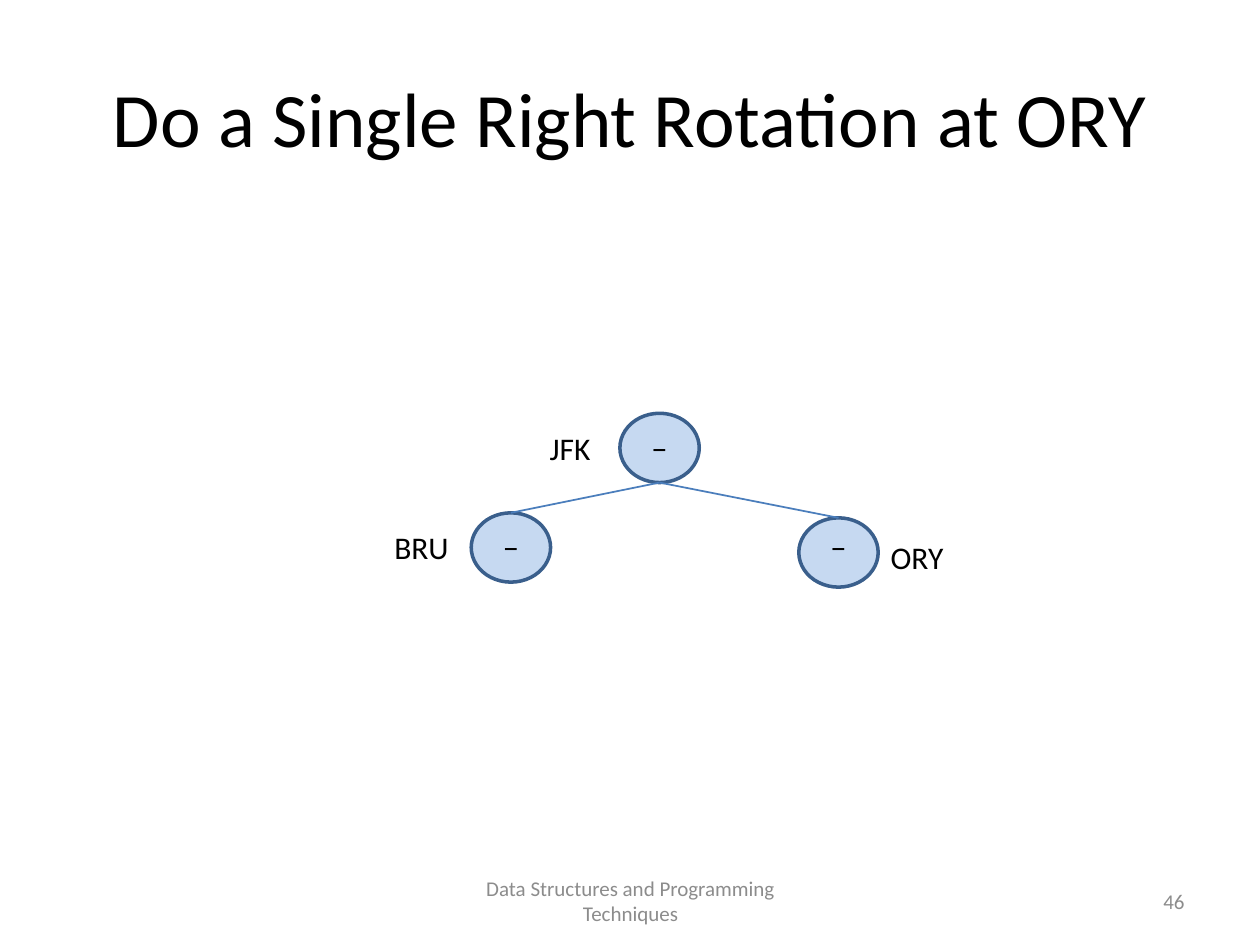
import dataclasses

import pptx
import pptx.dml.color
import pptx.enum.shapes
import pptx.enum.text
import pptx.oxml.ns
import pptx.util
from lxml import etree

Inches = pptx.util.Inches
Pt = pptx.util.Pt
RGB = pptx.dml.color.RGBColor.from_string
ALIGN = pptx.enum.text.PP_ALIGN
ANCHOR = pptx.enum.text.MSO_ANCHOR


@dataclasses.dataclass(frozen=True)
class Theme:
    font: str = "Calibri"
    ink: str = "000000"
    muted: str = "8C8C8C"
    node_fill: str = "C6D9F1"
    node_line: str = "3A5F8C"
    edge: str = "4B7EBC"
    title_size: int = 44
    label_size: int = 18
    footer_size: int = 12


theme = Theme()
deck = pptx.Presentation()
deck.slide_width = Inches(10)
deck.slide_height = Inches(7.5)
slide = deck.slides.add_slide(deck.slide_layouts[6])


def add_text(words, left, top, width, height, size, color=theme.ink,
             align=ALIGN.CENTER, anchor=ANCHOR.TOP):
    frame = slide.shapes.add_textbox(
        Inches(left), Inches(top), Inches(width), Inches(height)).text_frame
    frame.word_wrap = True
    frame.vertical_anchor = anchor
    frame.text = words
    paragraph = frame.paragraphs[0]
    paragraph.alignment = align
    font = paragraph.runs[0].font
    font.name = theme.font
    font.size = Pt(size)
    font.color.rgb = RGB(color)


add_text("Do a Single Right Rotation at ORY", 0.5, 0.3, 9, 1.25,
         theme.title_size, anchor=ANCHOR.MIDDLE)

node_width, node_height, label_height = 0.63, 0.55, 0.4
airports = [
    ("JFK", 4.92, 3.28, 3.36, 4.21, 3.36, 0.63, ALIGN.CENTER),
    ("BRU", 3.74, 4.07, 4.14, 2.95, 4.14, 0.79, ALIGN.CENTER),
    ("ORY", 6.34, 4.11, 4.14, 6.97, 4.22, 0.63, ALIGN.LEFT),
]
root_left, root_top = airports[0][1:3]

for code, left, top, sign_top, code_left, code_top, code_width, align in airports:
    node = slide.shapes.add_shape(
        pptx.enum.shapes.MSO_SHAPE.OVAL,
        Inches(left), Inches(top), Inches(node_width), Inches(node_height))
    node.shadow.inherit = False
    node.fill.solid()
    node.fill.fore_color.rgb = RGB(theme.node_fill)
    node.line.color.rgb = RGB(theme.node_line)
    node.line.width = Pt(2)
    add_text("−", left, sign_top, node_width, label_height, theme.label_size)
    add_text(code, code_left, code_top, code_width, label_height,
             theme.label_size, align=align)

for code, left, top, *placement in airports[1:]:
    edge = slide.shapes.add_connector(
        pptx.enum.shapes.MSO_CONNECTOR.STRAIGHT,
        Inches(root_left + node_width / 2), Inches(root_top + node_height),
        Inches(left + node_width / 2), Inches(top))
    edge.line.color.rgb = RGB(theme.edge)
    edge.line.width = Pt(1)
    etree.SubElement(edge._element.spPr, pptx.oxml.ns.qn("a:effectLst"))

add_text("Data Structures and Programming Techniques", 3.42, 6.95, 3.17, 0.4,
         theme.footer_size, theme.muted, anchor=ANCHOR.MIDDLE)
add_text("46", 7.17, 6.95, 2.33, 0.4, theme.footer_size, theme.muted,
         ALIGN.RIGHT, ANCHOR.MIDDLE)

deck.save("out.pptx")
